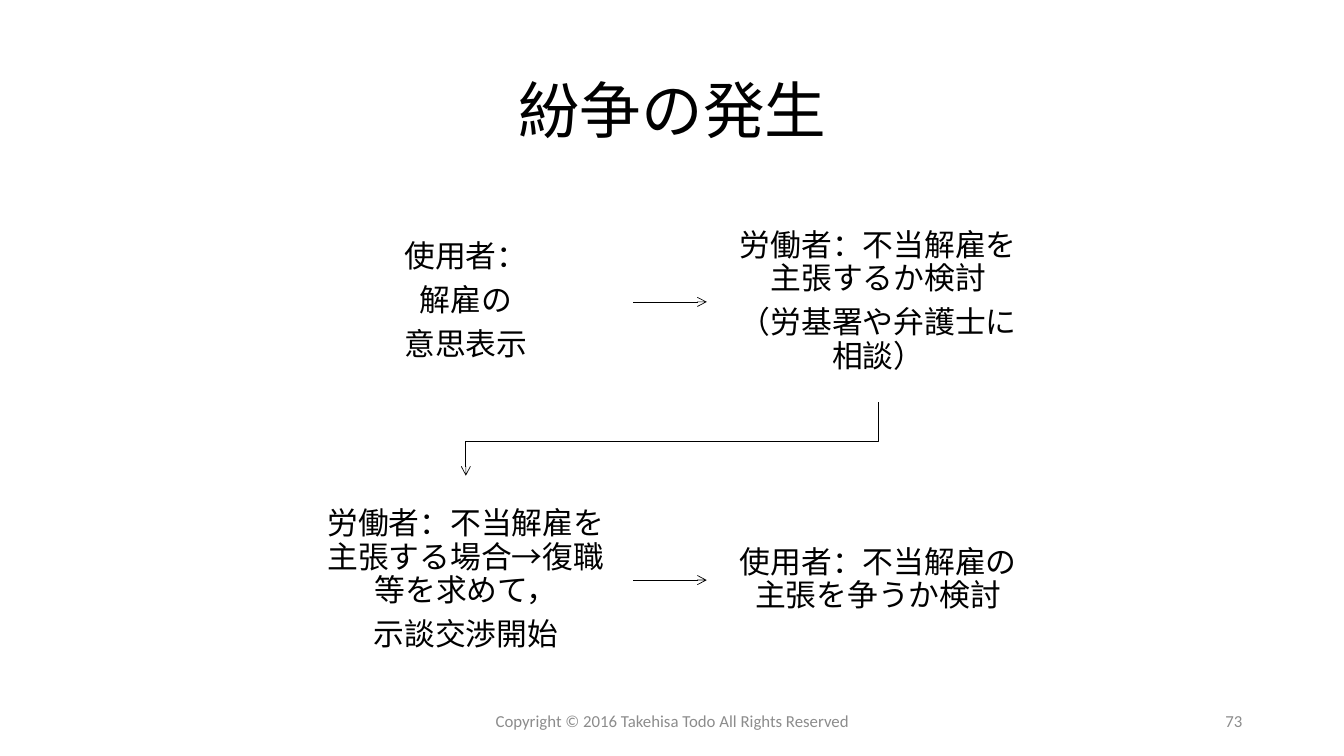
from dataclasses import dataclass

from lxml.etree import SubElement
from pptx import Presentation
from pptx.dml.color import RGBColor as RGB
from pptx.enum.shapes import MSO_CONNECTOR as Link, MSO_SHAPE as Kind
from pptx.enum.text import MSO_ANCHOR as Anchor, PP_ALIGN as Align
from pptx.oxml.ns import qn
from pptx.util import Inches, Pt


@dataclass(frozen=True)
class Theme:
    font: str = "Calibri"
    ink: RGB = RGB(0, 0, 0)
    paper: RGB = RGB(255, 255, 255)
    muted: RGB = RGB(0x8C, 0x8C, 0x8C)
    title: int = 44
    body: int = 22
    small: int = 12
    line: float = 0.5


THEME = Theme()
COLS, ROWS = (2.96, 7.05), (2, 4.76)
BOX_W, BOX_H = 3.32, 1.99
ARROW_END = 7.01
TURN_Y, TIP_Y = 4.38, 4.72

STEPS = [
    ["使用者：", "解雇の", "意思表示"],
    ["労働者：不当解雇を主張するか検討", "（労基署や弁護士に相談）"],
    ["労働者：不当解雇を主張する場合→復職等を求めて，", "示談交渉開始"],
    ["使用者：不当解雇の主張を争うか検討"],
]


def write(shape, lines, size=THEME.body, color=THEME.ink, align=Align.CENTER,
          spacing=0.9, after=0, inset=None):
    frame = shape.text_frame
    frame.word_wrap = True
    frame.vertical_anchor = Anchor.MIDDLE
    if inset is not None:
        frame.margin_left = frame.margin_right = Inches(inset)
        frame.margin_top = frame.margin_bottom = Inches(inset)
    for i, line in enumerate(lines):
        para = frame.add_paragraph() if i else frame.paragraphs[0]
        para.alignment = align
        para.line_spacing = spacing
        para.space_after = Pt(after)
        run = para.add_run()
        run.text = line
        run.font.name = THEME.font
        run.font.size = Pt(size)
        run.font.color.rgb = color


def place(shape, left, top, width, height):
    shape.left, shape.top = Inches(left), Inches(top)
    shape.width, shape.height = Inches(width), Inches(height)


def add_step(slide, left, top, lines):
    box = slide.shapes.add_shape(Kind.RECTANGLE, Inches(left), Inches(top),
                                 Inches(BOX_W), Inches(BOX_H))
    box.shadow.inherit = False
    box.fill.solid()
    box.fill.fore_color.rgb = THEME.paper
    box.line.fill.background()
    write(box, lines, after=0.35 * THEME.body, inset=0.17)
    return box


def style_arrow(shape):
    """Give the line its colour, width and an open head at its end."""
    shape.line.color.rgb = THEME.ink
    shape.line.width = Pt(THEME.line)
    ln = shape.line._get_or_add_ln()
    SubElement(ln, qn("a:tailEnd"), type="arrow")


def add_arrow(slide, box, top):
    mid = Inches(top + BOX_H / 2)
    arrow = slide.shapes.add_connector(Link.STRAIGHT, box.left + box.width, mid,
                                       Inches(ARROW_END), mid)
    arrow.begin_connect(box, 3)
    style_arrow(arrow)
    SubElement(arrow._element.spPr, qn("a:effectLst"))


def add_return(slide):
    """Draw the bent arrow from the upper right step to the lower left one."""
    end, start = (left + BOX_W / 2 for left in COLS)
    points = [(start, ROWS[0] + BOX_H), (start, TURN_Y), (end, TURN_Y), (end, TIP_Y)]
    points = [(Inches(x), Inches(y)) for x, y in points]
    pen = slide.shapes.build_freeform(*points[0])
    pen.add_line_segments(points[1:], close=False)
    bend = pen.convert_to_shape()
    bend.shadow.inherit = False
    bend.fill.background()
    style_arrow(bend)


def add_note(slide, text, left, width, align):
    note = slide.shapes.add_textbox(0, 0, 0, 0)
    place(note, left, 6.95, width, 0.4)
    write(note, [text], size=THEME.small, color=THEME.muted, align=align, spacing=1.0)


def main():
    deck = Presentation()
    deck.slide_width, deck.slide_height = Inches(13.33), Inches(7.5)
    slide = deck.slides.add_slide(deck.slide_layouts[5])

    title = slide.shapes.title
    place(title, 0.92, 0.4, 11.5, 1.45)
    write(title, ["紛争の発生"], size=THEME.title)

    spots = [(left, top) for top in ROWS for left in COLS]
    boxes = [add_step(slide, *spot, lines) for spot, lines in zip(spots, STEPS)]
    for box, top in zip(boxes[::2], ROWS):
        add_arrow(slide, box, top)
    add_return(slide)

    add_note(slide, "73", 9.42, 3, Align.RIGHT)
    add_note(slide, "Copyright © 2016 Takehisa Todo All Rights Reserved",
             4.42, 4.5, Align.CENTER)
    deck.save("out.pptx")


if __name__ == "__main__":
    main()
